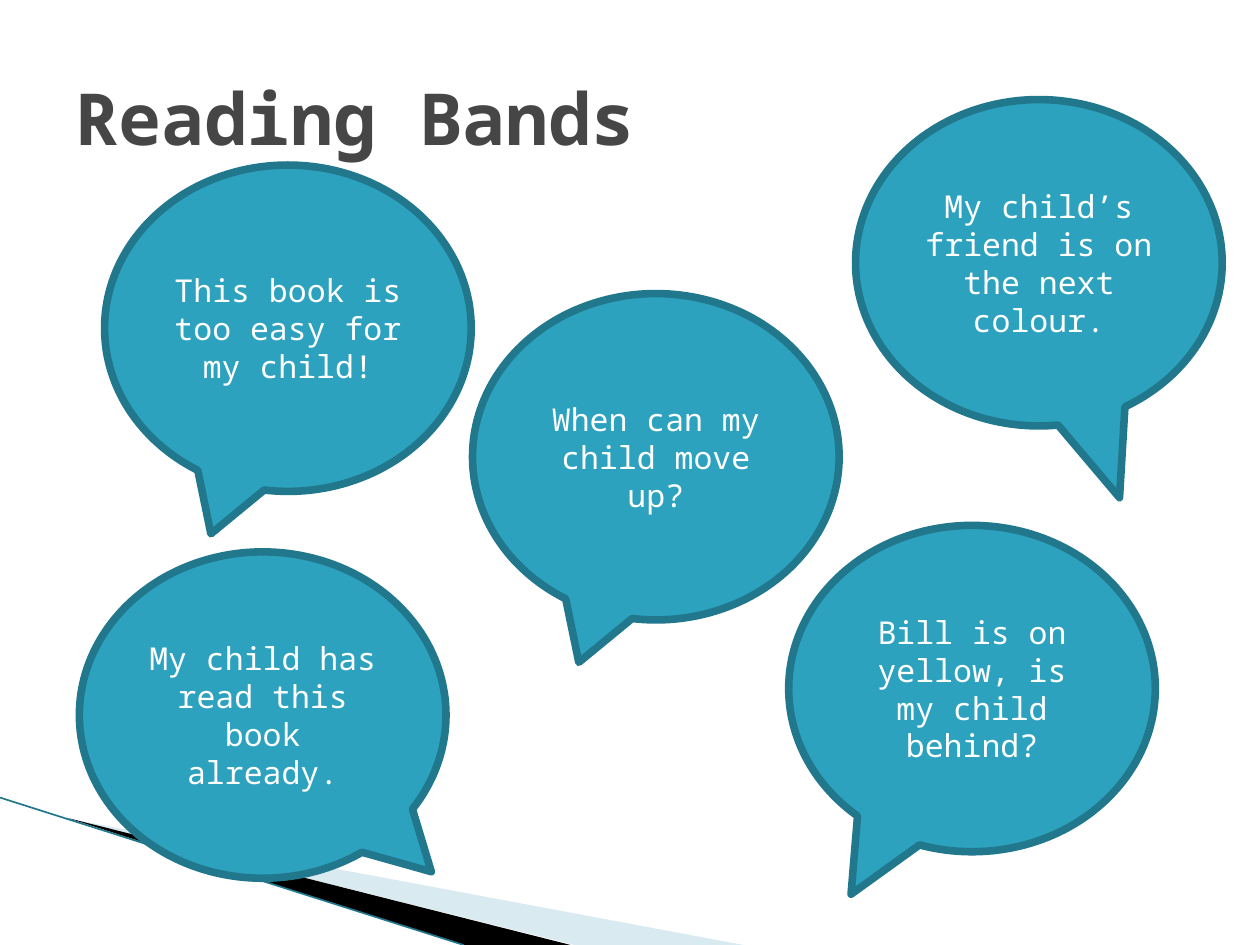
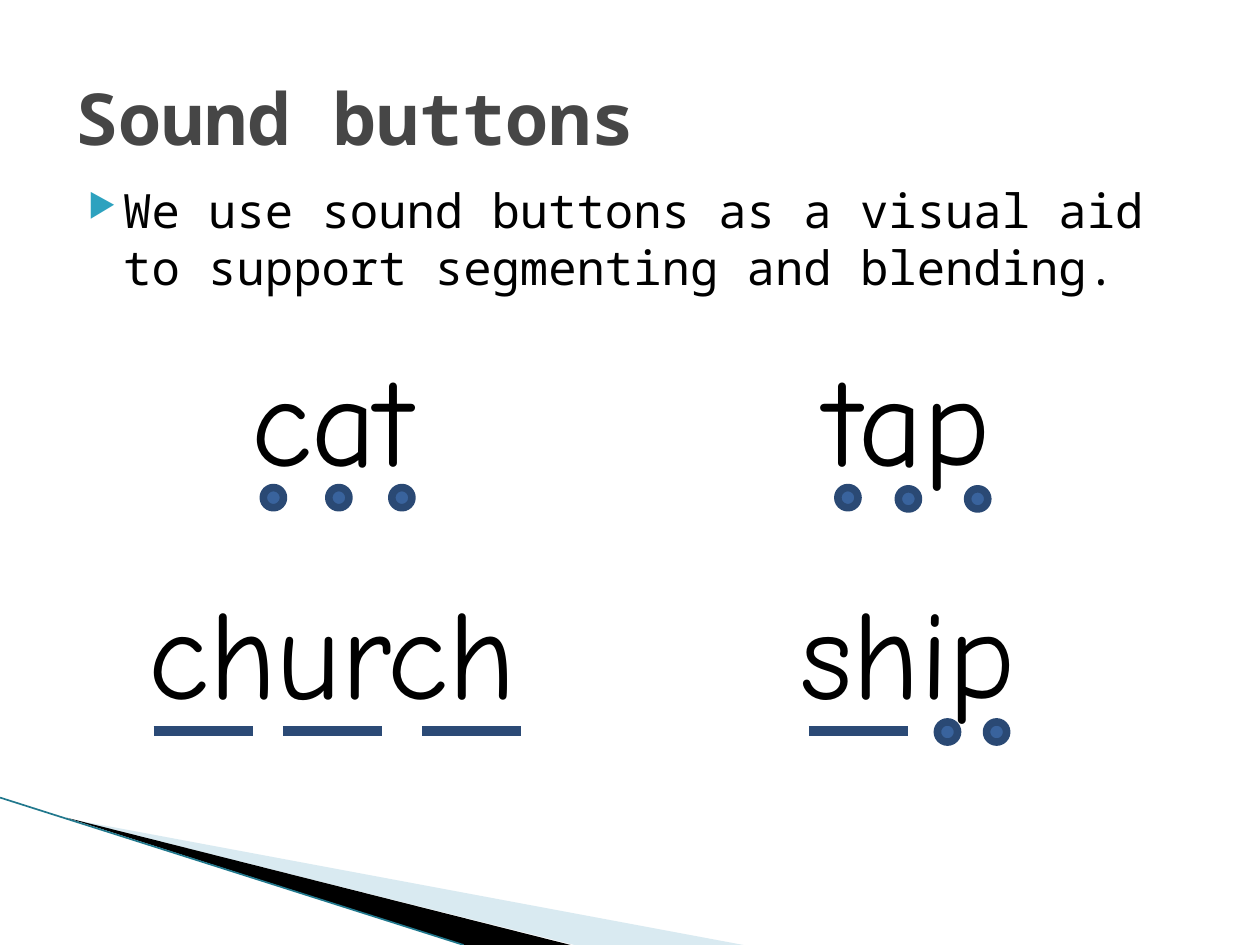
from dataclasses import dataclass

from lxml.etree import SubElement
from pptx import Presentation
from pptx.dml.color import RGBColor
from pptx.enum.shapes import MSO_CONNECTOR as Connector, MSO_SHAPE as Shape
from pptx.enum.text import MSO_ANCHOR as Anchor, MSO_AUTO_SIZE as AutoSize, PP_ALIGN as Align
from pptx.oxml.ns import qn
from pptx.util import Emu, Inches, Pt

# Grid: 100 columns by 75 rows over the whole slide
COLUMNS, ROWS = 100, 75
WIDTH, HEIGHT = Inches(10), Inches(7.5)


def across(columns: float) -> Emu:
    return Emu(round(WIDTH * columns / COLUMNS))


def down(rows: float) -> Emu:
    return Emu(round(HEIGHT * rows / ROWS))


@dataclass(frozen=True)
class Style:
    font: str
    size: float
    color: str
    bold: bool = False
    align: Align = Align.LEFT


@dataclass(frozen=True)
class Theme:
    background: str = "FFFFFF"
    accent: str = "2DA2BF"
    accent_dark: str = "21788D"
    wedge_light: str = "A0CBDC"
    wedge_dark: str = "000000"
    button: str = "39639D"
    button_edge: str = "2A4974"
    bar: str = "2B4A76"
    outline: float = 4.33
    bar_width: float = 6
    hairline: float = 0.95
    title: Style = Style("Noto Sans Mono", 41, "464646", bold=True)
    body: Style = Style("Noto Sans Mono", 27, "000000")
    speech: Style = Style("Noto Sans Mono", 18, "FFFFFF", align=Align.CENTER)
    word: Style = Style("Comic Neue", 72, "000000", align=Align.CENTER)


THEME = Theme()


@dataclass(frozen=True)
class Box:
    left: float
    top: float
    width: float
    height: float

    def place(self) -> tuple[Emu, Emu, Emu, Emu]:
        return across(self.left), down(self.top), across(self.width), down(self.height)


@dataclass(frozen=True)
class Bubble:
    text: str
    left: float
    top: float
    tail: tuple[float, float] = (-0.21, 0.63)


@dataclass(frozen=True)
class SoundWord:
    text: str
    left: float
    top: float
    dots: tuple[tuple[float, float], ...] = ()
    bars: tuple[float, ...] = ()


TITLE_BOX = Box(5, 3, 90, 12.5)
BODY_BOX = Box(4.8, 13.9, 90, 49.5)
BUBBLE_SIZE = (29.1, 25.9)
WORD_SIZE = (38.5, 13.1)
DOT = 1.6
BAR_LENGTH, BAR_ROW = 7.85, 58

BUBBLES = (
    Bubble("This book is too easy for my child!", 8.3, 13.1),
    Bubble("When can my child move up?", 37.5, 23.3),
    Bubble("My child’s friend is on the next colour.", 67.9, 7.9, (0.22, 0.72)),
    Bubble("My child has read this book already.", 6.3, 43.8, (0.46, 0.48)),
    Bubble("Bill is on yellow, is my child behind?", 62.6, 41.7, (-0.33, 0.63)),
)

LEFT_WORD, RIGHT_WORD = 7.1, 52.8
UPPER_WORD, LOWER_WORD = 26.5, 45
SOUND_WORDS = (
    SoundWord("cat", LEFT_WORD, UPPER_WORD, dots=((20.9, 38.7), (26.1, 38.7), (31.1, 38.7))),
    SoundWord("church", LEFT_WORD, LOWER_WORD, bars=(12.2, 22.45, 33.5)),
    SoundWord("tap", RIGHT_WORD, UPPER_WORD, dots=((66.5, 38.7), (71.3, 38.8), (76.8, 38.8))),
    SoundWord("ship", RIGHT_WORD, LOWER_WORD, dots=((74.4, 57.3), (78.3, 57.3)), bars=(64.2,)),
)


# Drawing helpers
def rgb(color: str) -> RGBColor:
    return RGBColor.from_string(color)


def write(shape, text: str, style: Style, anchor: Anchor = Anchor.TOP):
    frame = shape.text_frame
    frame.word_wrap = True
    frame.vertical_anchor = anchor
    paragraph = frame.paragraphs[0]
    paragraph.text = text
    paragraph.alignment = style.align
    font = paragraph.font
    font.name, font.size, font.bold = style.font, Pt(style.size), style.bold
    font.color.rgb = rgb(style.color)


def paint(shape, fill: str, edge: str | None = None):
    shape.shadow.inherit = False
    shape.fill.solid()
    shape.fill.fore_color.rgb = rgb(fill)
    if edge is None:
        shape.line.fill.background()
    else:
        shape.line.color.rgb = rgb(edge)
        shape.line.width = Pt(THEME.outline)


def draw_line(slide, start: tuple[float, float], end: tuple[float, float], color: str, width: float):
    line = slide.shapes.add_connector(
        Connector.STRAIGHT, across(start[0]), down(start[1]), across(end[0]), down(end[1]))
    line.line.color.rgb = rgb(color)
    line.line.width = Pt(width)
    SubElement(line._element.spPr, qn("a:effectLst"))


def draw_wedge(slide, points: tuple[tuple[float, float], ...], color: str, opacity: int = 100):
    first, *rest = [(across(x), down(y)) for x, y in points]
    builder = slide.shapes.build_freeform(*first)
    builder.add_line_segments(rest, close=True)
    wedge = builder.convert_to_shape()
    paint(wedge, color)
    if opacity < 100:
        fill_color = wedge._element.spPr.find(f".//{qn('a:srgbClr')}")
        SubElement(fill_color, qn("a:alpha"), val=str(opacity * 1000))


def add_bullet(paragraph):
    properties = paragraph._p.get_or_add_pPr()
    properties.set("marL", str(Inches(0.4)))
    properties.set("indent", str(Inches(-0.28)))
    color = SubElement(properties, qn("a:buClr"))
    SubElement(color, qn("a:srgbClr"), val=THEME.accent)
    SubElement(properties, qn("a:buSzPct"), val="68000")
    SubElement(properties, qn("a:buChar"), char="▶")


# Shared slide frame: background, corner wedges and title
def add_slide(presentation, title: str):
    slide = presentation.slides.add_slide(presentation.slide_layouts[6])
    slide.background.fill.solid()
    slide.background.fill.fore_color.rgb = rgb(THEME.background)
    draw_wedge(slide, ((5.5, 65), (59, 75), (45.6, 75)), THEME.wedge_light, 40)
    draw_wedge(slide, ((5.3, 64.9), (45.3, 75), (36.8, 75)), THEME.wedge_dark)
    draw_line(slide, (0, 63.3), (36.8, 75), THEME.accent_dark, THEME.hairline)
    write(slide.shapes.add_textbox(*TITLE_BOX.place()), title, THEME.title, Anchor.MIDDLE)
    return slide


def draw_bubble(slide, bubble: Bubble):
    box = Box(bubble.left, bubble.top, *BUBBLE_SIZE)
    shape = slide.shapes.add_shape(Shape.OVAL_CALLOUT, *box.place())
    shape.adjustments[0], shape.adjustments[1] = bubble.tail
    paint(shape, THEME.accent, THEME.accent_dark)
    write(shape, bubble.text, THEME.speech, Anchor.MIDDLE)


def draw_sound_word(slide, word: SoundWord):
    box = Box(word.left, word.top, *WORD_SIZE)
    label = slide.shapes.add_textbox(*box.place())
    write(label, word.text, THEME.word)
    label.text_frame.auto_size = AutoSize.SHAPE_TO_FIT_TEXT
    for left, top in word.dots:
        dot = slide.shapes.add_shape(Shape.OVAL, *Box(left, top, DOT, DOT).place())
        paint(dot, THEME.button, THEME.button_edge)
    for left in word.bars:
        draw_line(slide, (left, BAR_ROW), (left + BAR_LENGTH, BAR_ROW), THEME.bar, THEME.bar_width)


# Slides
def build_reading_bands(presentation):
    slide = add_slide(presentation, "Reading Bands")
    for bubble in BUBBLES:
        draw_bubble(slide, bubble)


def build_sound_buttons(presentation):
    slide = add_slide(presentation, "Sound buttons")
    body = slide.shapes.add_textbox(*BODY_BOX.place())
    add_bullet(body.text_frame.paragraphs[0])
    write(body, "We use sound buttons as a visual aid to support segmenting and blending.", THEME.body)
    for word in SOUND_WORDS:
        draw_sound_word(slide, word)


def main():
    presentation = Presentation()
    presentation.slide_width, presentation.slide_height = WIDTH, HEIGHT
    build_reading_bands(presentation)
    build_sound_buttons(presentation)
    presentation.save("out.pptx")


if __name__ == "__main__":
    main()
